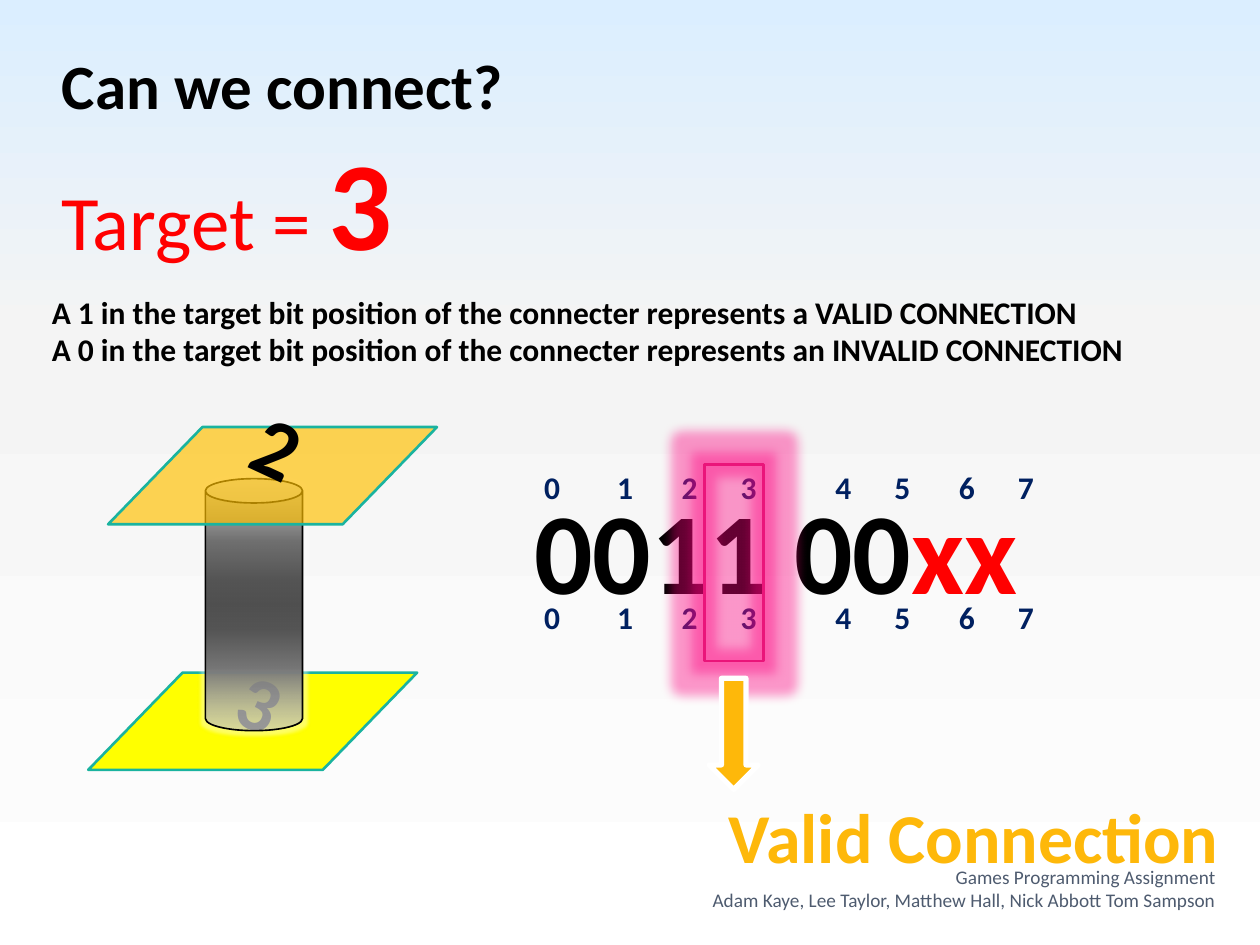
from itertools import accumulate

from lxml import etree
from pptx import Presentation
from pptx import util as u
from pptx.dml.color import RGBColor
from pptx.enum import shapes, text
from pptx.oxml.ns import qn

BLACK, RED, NAVY, AMBER = "000000", "FF0000", "002060", "FEB80A"
TEAL, PINK, SLATE, WHITE = "1AB39F", "EA157A", "4E5B6F", "FFFFFF"


def rgb(value):
    return RGBColor.from_string(value)


def add_color(parent, value, alpha=100):
    clr = etree.SubElement(parent, qn("a:srgbClr"), val=value)
    if alpha < 100:
        etree.SubElement(clr, qn("a:alpha"), val=str(alpha * 1000))


def set_gradient(fill, root, stops, angle):
    """Fill with (position, colour, opacity) stops; angle is clockwise."""
    fill.gradient()
    grad = root.find(".//" + qn("a:gradFill"))
    gs_list = grad.find(qn("a:gsLst"))
    for old in list(gs_list):
        gs_list.remove(old)
    for pos, value, alpha in stops:
        gs = etree.SubElement(gs_list, qn("a:gs"), pos=str(pos * 1000))
        add_color(gs, value, alpha)
    grad.find(qn("a:lin")).set("ang", str(angle * 60000))


class Deck:
    font = "Calibri"

    def __init__(self):
        self.prs = Presentation()
        self.prs.slide_width, self.prs.slide_height = u.Cm(25.4), u.Cm(19.05)
        self.s = self.prs.slides.add_slide(self.prs.slide_layouts[1])

    def background(self, stops, angle):
        set_gradient(self.s.background.fill, self.s._element, stops, angle)

    def style(self, r, size, color, bold):
        r.font.name, r.font.size, r.font.bold = self.font, u.Pt(size), bold
        r.font.color.rgb = rgb(color)

    def set_text(self, sp, content, size, color=BLACK, bold=True, align="LEFT"):
        tf = sp.text_frame
        tf.text = content
        tf.word_wrap = True
        tf.auto_size = text.MSO_AUTO_SIZE.NONE
        for p in tf.paragraphs:
            p.alignment = getattr(text.PP_ALIGN, align)
            for r in p.runs:
                self.style(r, size, color, bold)
        return sp

    def placeholder(self, idx, box, content, size):
        sp = self.s.placeholders[idx]
        sp.left, sp.top, sp.width, sp.height = map(u.Cm, box)
        self.set_text(sp, content, size)
        for p in sp.text_frame.paragraphs:
            p.space_before = u.Pt(0)
            if idx:
                pPr = p._p.get_or_add_pPr()
                pPr.set("marL", "0")
                pPr.set("indent", "0")
                etree.SubElement(pPr, qn("a:buNone"))

    def textbox(self, box, content, size, rotation=0, **look):
        sp = self.s.shapes.add_textbox(*map(u.Cm, box))
        sp.rotation = rotation
        return self.set_text(sp, content, size, **look)

    def append_run(self, sp, content, size, color):
        r = sp.text_frame.paragraphs[0].add_run()
        r.text = content
        self.style(r, size, color, True)

    def tab_stops(self, sp, stops):
        pPr = sp.text_frame.paragraphs[0]._p.get_or_add_pPr()
        tabs = etree.SubElement(pPr, qn("a:tabLst"))
        for stop in stops:
            etree.SubElement(tabs, qn("a:tab"), pos=str(u.Cm(stop)), algn="l")

    def shape(self, kind, box, line, width, fill=None, alpha=100, adj=None):
        sp = self.s.shapes.add_shape(
            getattr(shapes.MSO_SHAPE, kind), *map(u.Cm, box))
        sp.shadow.inherit = False
        sp.line.color.rgb, sp.line.width = rgb(line), u.Pt(width)
        if fill:
            sp.fill.solid()
            sp.fill.fore_color.rgb = rgb(fill)
            if alpha < 100:
                solid = sp._element.spPr.find(qn("a:solidFill"))
                solid.remove(solid[0])
                add_color(solid, fill, alpha)
        else:
            sp.fill.background()
        if adj is not None:
            sp.adjustments[0] = adj
        return sp

    def glow(self, sp, radius, color, alpha):
        effects = sp._element.spPr.find(qn("a:effectLst"))
        glow = etree.SubElement(effects, qn("a:glow"), rad=str(u.Cm(radius)))
        add_color(glow, color, alpha)


def main():
    d = Deck()
    d.background([(0, WHITE, 100), (65, "F4F4F4", 100), (100, "DBEEFF", 100)], 270)

    # Heading, target and rules
    d.placeholder(0, (0.99, 0.79, 16.08, 1.8), "Can we connect?", 36)
    target = d.textbox((0.99, 2.39, 7.39, 3.33), "Target = ", 44,
                       color=RED, bold=False)
    target.text_frame.word_wrap = False
    d.append_run(target, "3", 72, RED)
    d.placeholder(
        1, (0.79, 5.77, 23.42, 1.8),
        "A 1 in the target bit position of the connecter represents a VALID CONNECTION\n"
        "A 0 in the target bit position of the connecter represents an INVALID CONNECTION",
        18)

    # Two tiles joined by a pipe
    d.shape("PARALLELOGRAM", (1.78, 13.56, 6.63, 1.96), TEAL, 1.5, "FFFF00", adj=0.97)
    d.textbox((4.47, 13.18, 1.96, 2.69), "3", 44, rotation=24.9)
    pipe = d.shape("CAN", (4.14, 9.65, 1.96, 5.08), BLACK, 0.94)
    set_gradient(pipe.fill, pipe._element, [
        (0, "C0C0C0", 77), (25, "707070", 100), (40, "555555", 100),
        (50, "505050", 100), (60, "555555", 100), (75, "767676", 100),
        (100, "C0C0C0", 56)], 90)
    d.glow(pipe, 0.14, WHITE, 40)
    d.shape("PARALLELOGRAM", (2.18, 8.61, 6.63, 1.96), TEAL, 1.5, "FFC000", 67, 0.97)
    d.textbox((4.78, 7.92, 1.96, 2.92), "2", 48, rotation=24.9)

    # Connecter bits with their positions above and below
    bits = d.textbox((10.52, 9.53, 13.11, 3.07), "0011 00", 66)
    d.append_run(bits, "xx", 66, RED)
    stops = list(accumulate([1.47, 1.3, 1.19, 1.91, 1.19, 1.3, 1.19]))
    for top in (11.94, 9.32):
        row = d.textbox((10.72, top, 12.29, 1.02), "\t".join("01234567"), 18,
                        color=NAVY)
        d.tab_stops(row, stops)

    # Highlighted bit and its result
    marker = d.shape("RECTANGLE", (14.2, 9.37, 1.19, 3.96), PINK, 1.5)
    d.glow(marker, 0.45, "FF0080", 40)
    arrow = d.shape("RIGHT_ARROW", (13.67, 14.3, 2.24, 0.99), WHITE, 3, AMBER)
    arrow.rotation = 90
    d.textbox((13.28, 15.88, 12.7, 1.96), "Valid Connection", 40,
              color=AMBER, align="CENTER")

    # Footer
    footer = d.textbox(
        (9.32, 17.48, 15.44, 1.02),
        "Games Programming Assignment\n"
        "Adam Kaye, Lee Taylor, Matthew Hall, Nick Abbott Tom Sampson",
        11, color=SLATE, bold=False, align="RIGHT")
    footer.text_frame.vertical_anchor = text.MSO_ANCHOR.BOTTOM

    d.prs.save("out.pptx")


if __name__ == "__main__":
    main()
